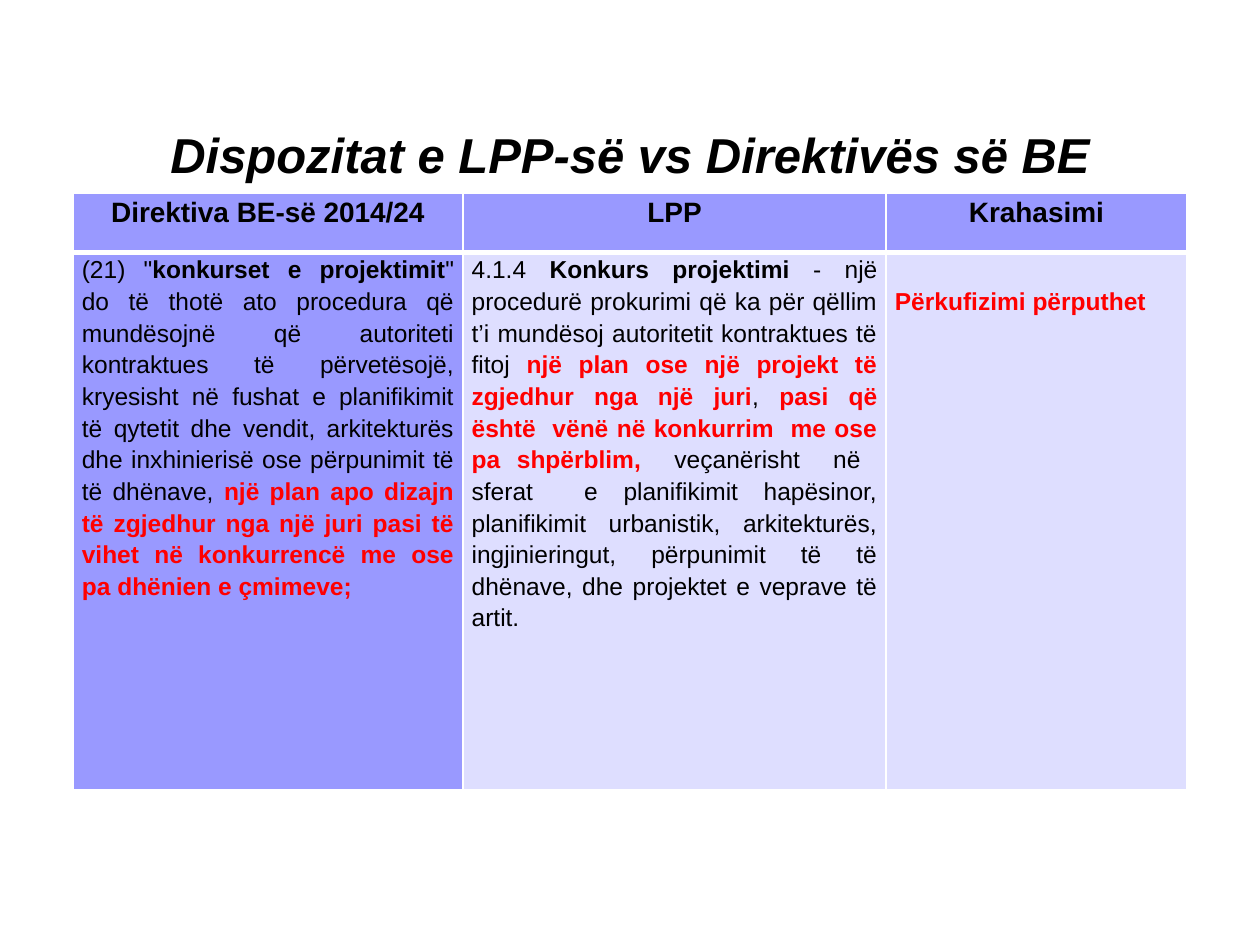
from lxml import etree
from pptx import Presentation
from pptx.dml.color import RGBColor
from pptx.enum.text import MSO_ANCHOR, PP_ALIGN
from pptx.oxml.ns import qn
from pptx.util import Inches, Pt

CENTER, JUSTIFY = PP_ALIGN.CENTER, PP_ALIGN.JUSTIFY
BOTTOM = MSO_ANCHOR.BOTTOM
PAGE_WIDTH, PAGE_HEIGHT = 10, 7.5
BLACK, RED, WHITE = "000000", "FF0000", "FFFFFF"
VIOLET, LAVENDER = "9999FF", "DEDEFF"

HEADERS = ["Direktiva BE-së 2014/24", "LPP", "Krahasimi"]
DIRECTIVE = [
    ('(21) "', {}),
    ("konkurset e projektimit", {"bold": True}),
    ('" do të thotë ato procedura që mundësojnë që autoriteti kontraktues të '
     "përvetësojë, kryesisht në fushat e planifikimit të qytetit dhe vendit, "
     "arkitekturës dhe inxhinierisë ose përpunimit të të dhënave, ", {}),
    ("një plan apo dizajn të zgjedhur nga një juri pasi të vihet në konkurrencë "
     "me ose pa dhënien e çmimeve;", {"bold": True, "color": RED}),
]
LAW = [
    ("4.1.4 ", {}),
    ("Konkurs projektimi ", {"bold": True}),
    ("- një procedurë prokurimi që ka për qëllim t’i mundësoj autoritetit "
     "kontraktues të fitoj ", {}),
    ("një plan ose një projekt të zgjedhur nga një juri", {"bold": True, "color": RED}),
    (", ", {}),
    ("pasi që është  vënë në konkurrim  me ose pa shpërblim,  ",
     {"bold": True, "color": RED}),
    ("veçanërisht  në  sferat  e planifikimit hapësinor, planifikimit urbanistik, "
     "arkitekturës, ingjinieringut, përpunimit të të dhënave, dhe projektet e "
     "veprave të artit.", {}),
]
COMPARISON = [("Përkufizimi përputhet", {"bold": True, "color": RED})]


def rgb(value):
    return RGBColor.from_string(value)


def add_span(para, text, size=14, bold=False, italic=False, color=BLACK):
    span = para.add_run()
    span.text = text
    font = span.font
    font.name, font.size = "Arial", Pt(size)
    font.bold, font.italic = bold, italic
    font.color.rgb = rgb(color)


def add_border(cell, side, width):
    line = etree.SubElement(cell._tc.get_or_add_tcPr(), qn(f"a:ln{side}"), w=str(Pt(width)))
    fill = etree.SubElement(line, qn("a:solidFill"))
    etree.SubElement(fill, qn("a:srgbClr"), val=WHITE)


class SlideBuilder:
    """Places elements by shares of the page's width and height."""

    def __init__(self, deck):
        self.page = deck.slides.add_slide(deck.slide_layouts[6])

    def place(self, left, top, width, height):
        return (Inches(left * PAGE_WIDTH), Inches(top * PAGE_HEIGHT),
                Inches(width * PAGE_WIDTH), Inches(height * PAGE_HEIGHT))

    def title(self, text, *area):
        frame = self.page.shapes.add_textbox(*self.place(*area)).text_frame
        frame.word_wrap = True
        frame.vertical_anchor = BOTTOM
        para = frame.paragraphs[0]
        para.alignment = CENTER
        add_span(para, text, size=28, bold=True, italic=True)

    def table(self, area, column_shares, row_shares):
        left, top, width, height = self.place(*area)
        table = self.page.shapes.add_table(
            len(row_shares), len(column_shares), left, top, width, height).table
        for column, share in zip(table.columns, column_shares):
            column.width = int(width * share)
        for row, share in zip(table.rows, row_shares):
            row.height = int(height * share)
        return table

    def cell(self, cell, spans, fill, align=JUSTIFY, top=0, bottom_line=1):
        cell.margin_left = cell.margin_right = Inches(0.07)
        cell.margin_top, cell.margin_bottom = Inches(top), 0
        for side in "LRT":
            add_border(cell, side, 1)
        add_border(cell, "B", bottom_line)
        cell.fill.solid()
        cell.fill.fore_color.rgb = rgb(fill)
        para = cell.text_frame.paragraphs[0]
        para.alignment, para.line_spacing = align, 1.15
        for text, style in spans:
            add_span(para, text, **style)


def main():
    deck = Presentation()
    deck.slide_width, deck.slide_height = Inches(PAGE_WIDTH), Inches(PAGE_HEIGHT)
    builder = SlideBuilder(deck)
    builder.title("Dispozitat e LPP-së vs Direktivës së BE", 0.05, 0.07, 0.9, 0.13)

    table = builder.table((0.058, 0.204, 0.884, 0.632), (0.35, 0.38, 0.27), (0.1, 0.9))
    for column, header in enumerate(HEADERS):
        builder.cell(table.cell(0, column), [(header, {"size": 16, "bold": True})],
                     VIOLET, align=CENTER, bottom_line=3)
    builder.cell(table.cell(1, 0), DIRECTIVE, VIOLET)
    builder.cell(table.cell(1, 1), LAW, LAVENDER)
    builder.cell(table.cell(1, 2), COMPARISON, LAVENDER, top=0.25)
    deck.save("out.pptx")


if __name__ == "__main__":
    main()
